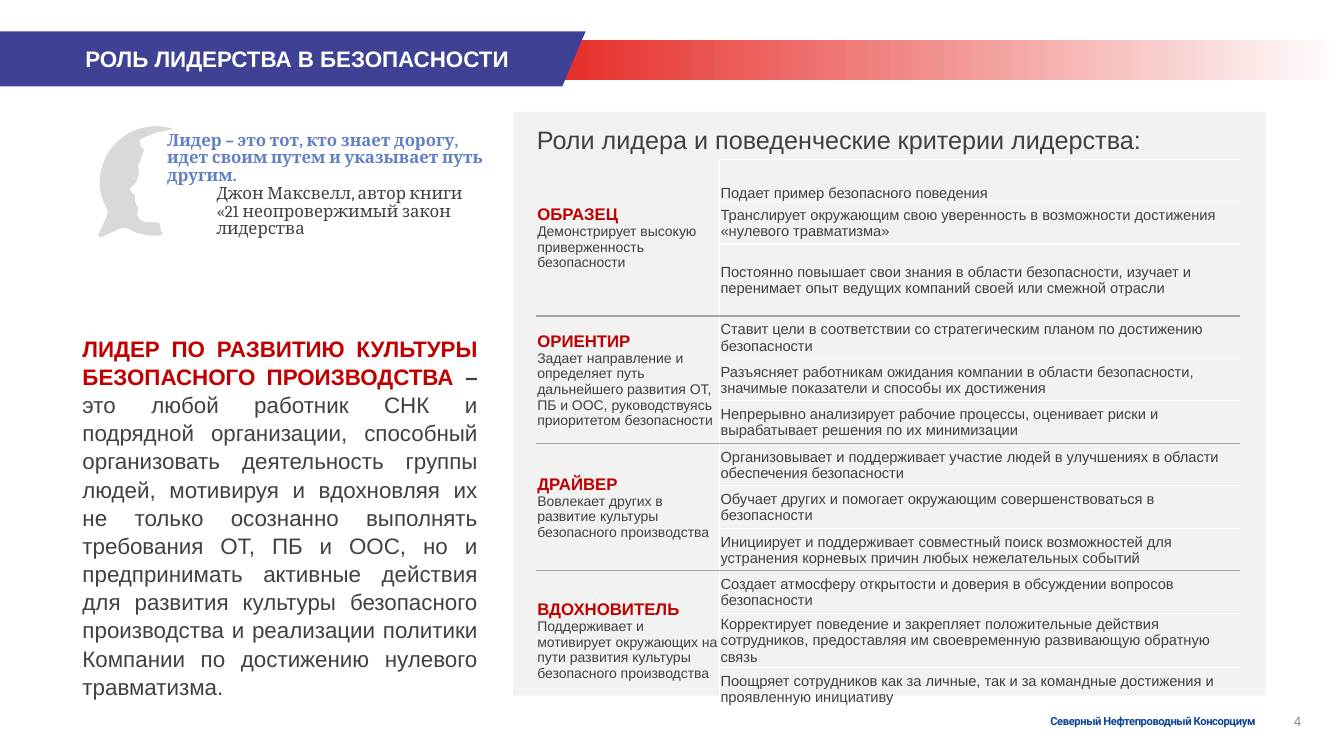
from dataclasses import dataclass

import pptx
import pptx.dml.color
import pptx.enum.shapes
import pptx.enum.text
import pptx.oxml
import pptx.oxml.ns
import pptx.util

Cm = pptx.util.Cm
Pt = pptx.util.Pt
ANCHOR = pptx.enum.text.MSO_ANCHOR
ALIGN = pptx.enum.text.PP_ALIGN
RECT = pptx.enum.shapes.MSO_SHAPE.RECTANGLE

COLORS = {
    "white": "FFFFFF", "red": "E62B27", "banner": "3F4195", "panel": "F2F2F2",
    "head": "D9D9D9", "text": "414042", "accent": "C00000", "quote": "627FC4",
    "number": "8D8B8F", "footer": "0B4395", "rule": "A6A6A6",
}
NO_STYLE = "{2D5ABB26-0587-4C30-8999-92F81FD0307C}"
ROLE_ROWS = 3
ROW_HEIGHT, TALL_ROW, TALL_ROW_HEIGHT = 1.07, 2, 1.81


@dataclass
class Style:
    size: float
    color: str = "text"
    bold: bool = False
    font: str = "Arial"


@dataclass
class Box:
    left: float
    top: float
    width: float
    height: float

    def emu(self) -> tuple:
        return Cm(self.left), Cm(self.top), Cm(self.width), Cm(self.height)


@dataclass
class Role:
    name: str
    summary: str
    criteria: tuple


ROLES = [
    Role("ОБРАЗЕЦ", "Демонстрирует высокую приверженность безопасности", (
        "Подает пример безопасного поведения",
        "Транслирует окружающим свою уверенность в возможности достижения «нулевого травматизма»",
        "Постоянно повышает свои знания в области безопасности, изучает и перенимает опыт ведущих компаний своей или смежной отрасли")),
    Role("ОРИЕНТИР", "Задает направление и определяет путь дальнейшего развития ОТ, ПБ и ООС, руководствуясь приоритетом безопасности", (
        "Ставит цели в соответствии со стратегическим планом по достижению безопасности",
        "Разъясняет работникам ожидания компании в области безопасности, значимые показатели и способы их достижения",
        "Непрерывно анализирует рабочие процессы, оценивает риски и вырабатывает решения по их минимизации")),
    Role("ДРАЙВЕР", "Вовлекает других в развитие культуры безопасного производства", (
        "Организовывает и поддерживает участие людей в улучшениях в области обеспечения безопасности",
        "Обучает других и помогает окружающим совершенствоваться в безопасности",
        "Инициирует и поддерживает совместный поиск возможностей для устранения корневых причин любых нежелательных событий")),
    Role("ВДОХНОВИТЕЛЬ", "Поддерживает и мотивирует окружающих на пути развития культуры безопасного производства", (
        "Создает атмосферу открытости и доверия в обсуждении вопросов безопасности",
        "Корректирует поведение и закрепляет положительные действия сотрудников, предоставляя им своевременную развивающую обратную связь",
        "Поощряет сотрудников как за личные, так и за командные достижения и проявленную инициативу")),
]

BANNER = [(0, 0.79), (14.76, 0.79), (14.17, 2.18), (0, 2.18)]
# Pairs are line ends; sixes are two control points and a curve end.
HEAD = [
    (3.89, 3.18), (3.12, 3.2, 2.51, 3.84, 2.51, 4.6), (2.51, 4.8, 2.57, 5.03, 2.67, 5.21),
    (2.72, 5.28, 2.72, 5.36, 2.69, 5.46), (2.49, 5.89), (2.46, 5.94, 2.51, 5.97, 2.57, 5.97),
    (3, 5.77), (3.07, 5.74, 3.15, 5.74, 3.25, 5.77), (3.43, 5.89, 3.66, 5.94, 3.91, 5.94),
    (4.11, 5.92), (4.06, 5.82), (4.04, 5.72), (4.01, 5.61), (3.76, 5.59), (3.63, 5.59),
    (3.53, 5.54), (3.45, 5.41), (3.48, 5.33), (3.48, 5.23), (3.43, 5.16), (3.4, 5.05),
    (3.4, 4.93), (3.28, 4.8), (3.3, 4.72), (3.43, 4.6), (3.51, 4.34), (3.48, 4.19),
    (3.56, 3.99), (3.63, 3.76), (3.56, 3.71), (3.53, 3.63), (3.53, 3.51), (3.71, 3.43),
    (3.91, 3.35), (4.14, 3.3), (4.37, 3.25), (4.22, 3.2, 4.06, 3.18, 3.89, 3.18),
]


def rgb(name: str):
    return pptx.dml.color.RGBColor.from_string(COLORS[name])


def style_run(r, style: Style) -> None:
    r.font.size, r.font.bold, r.font.name = Pt(style.size), style.bold, style.font
    r.font.color.rgb = rgb(style.color)


def fill_plain(s, color: str) -> None:
    s.shadow.inherit = False
    s.line.fill.background()
    s.fill.solid()
    s.fill.fore_color.rgb = rgb(color)


def flatten(outline: list, steps: int = 10) -> list:
    """Turn the curves of an outline into short straight pieces."""
    points = [outline[0]]
    for part in outline[1:]:
        if len(part) == 2:
            points.append(part)
            continue
        knots = [points[-1], part[:2], part[2:4], part[4:]]
        for i in range(1, steps + 1):
            t = i / steps
            weights = ((1 - t) ** 3, 3 * t * (1 - t) ** 2, 3 * t * t * (1 - t), t ** 3)
            points.append(tuple(sum(w * k[axis] for w, k in zip(weights, knots)) for axis in (0, 1)))
    return points


def add_outline(shapes, outline: list, color: str) -> None:
    points = [(Cm(x), Cm(y)) for x, y in flatten(outline)]
    builder = shapes.build_freeform(*points[0])
    builder.add_line_segments(points[1:], close=True)
    fill_plain(builder.convert_to_shape(), color)


def add_text(shapes, box: Box, text: str, styles: list, anchor=ANCHOR.TOP, wrap: bool = True):
    """Add a text box with one style for each paragraph."""
    tf = shapes.add_textbox(*box.emu()).text_frame
    tf.word_wrap, tf.vertical_anchor = wrap, anchor
    tf.text = text
    for p, style in zip(tf.paragraphs, styles):
        for r in p.runs:
            style_run(r, style)
    return tf


def fill_cell(cell, text: str, styles: list, borders: dict, anchor=ANCHOR.MIDDLE) -> None:
    cell.text = text
    cell.vertical_anchor = anchor
    cell.margin_left = cell.margin_right = cell.margin_top = Cm(0.03)
    cell.margin_bottom = 0
    for p, style in zip(cell.text_frame.paragraphs, styles):
        style_run(p.runs[0], style)
    set_borders(cell, borders)
    cell.fill.background()


def set_borders(cell, borders: dict) -> None:
    ns = pptx.oxml.ns.nsdecls("a")
    for side in "LRTB":
        if side in borders:
            cell._tc.get_or_add_tcPr().append(pptx.oxml.parse_xml(
                f'<a:ln{side} {ns} w="12700"><a:solidFill><a:srgbClr val="{COLORS[borders[side]]}"/>'
                f'</a:solidFill></a:ln{side}>'))


def add_roles(shapes) -> None:
    count = len(ROLES) * ROLE_ROWS
    frame = shapes.add_table(count, 2, *Box(13.51, 4.01, 17.75, count * ROW_HEIGHT).emu())
    table = frame.table
    table.first_row = table.horz_banding = False
    table._tbl.tblPr.find(pptx.oxml.ns.qn("a:tableStyleId")).text = NO_STYLE
    for column, width in zip(table.columns, (4.62, 13.13)):
        column.width = Cm(width)
    for i, row in enumerate(table.rows):
        row.height = Cm(TALL_ROW_HEIGHT if i == TALL_ROW else ROW_HEIGHT)

    for n, role in enumerate(ROLES):
        first = n * ROLE_ROWS
        last = first + ROLE_ROWS - 1
        rules = {"T": "rule"} if n else {}
        if n < len(ROLES) - 1:
            rules["B"] = "rule"
        title = table.cell(first, 0)
        title.merge(table.cell(last, 0))
        fill_cell(title, f"{role.name}\n{role.summary}",
                  [Style(12, "accent", True), Style(10)], {"R": "white", **rules})
        set_borders(table.cell(last, 0), {"B": rules["B"]} if "B" in rules else {})
        for i, text in enumerate(role.criteria, first):
            borders = {"L": "white", "T": "white", "B": "white"}
            if i == first and "T" in rules:
                borders["T"] = "rule"
            if i == last and "B" in rules:
                borders["B"] = "rule"
            fill_cell(table.cell(i, 1), text, [Style(10.5)], borders,
                      ANCHOR.MIDDLE if i else ANCHOR.BOTTOM)


def main() -> None:
    prs = pptx.Presentation()
    prs.slide_width, prs.slide_height = Cm(33.87), Cm(19.05)
    shapes = prs.slides.add_slide(prs.slide_layouts[6]).shapes

    bar = shapes.add_shape(RECT, *Box(13.94, 1.02, 19.93, 1).emu())
    fill_plain(bar, "red")
    bar.fill.gradient()
    bar.fill.gradient_angle = 0
    for stop, color, position in zip(bar.fill.gradient_stops, ("red", "white"), (0, 1)):
        stop.color.rgb, stop.position = rgb(color), position
    add_outline(shapes, BANNER, "banner")

    tf = add_text(shapes, Box(32.05, 17.96, 1.3, 0.41), "4", [Style(9.7, "number")], ANCHOR.MIDDLE)
    tf.margin_left = tf.margin_right = tf.margin_top = tf.margin_bottom = 0
    tf.paragraphs[0].alignment = ALIGN.CENTER
    tf = add_text(shapes, Box(24.49, 17.5, 9.37, 1.35), "Северный Нефтепроводный Консорциум",
                  [Style(8, "footer", True, "Roboto")], ANCHOR.MIDDLE)
    tf.margin_left = Cm(1.98)
    tf.paragraphs[0].runs[0].font._element.set("spc", "-30")

    fill_plain(shapes.add_shape(RECT, *Box(12.93, 2.82, 18.97, 14.71).emu()), "panel")
    add_text(shapes, Box(1.9, 0.76, 12.17, 1.42), "РОЛЬ ЛИДЕРСТВА В БЕЗОПАСНОСТИ",
             [Style(16, "white", True)], ANCHOR.MIDDLE)

    tf = add_text(shapes, Box(1.83, 8.28, 10.46, 9.14), "", [])
    p = tf.paragraphs[0]
    p.alignment, p.line_spacing = ALIGN.JUSTIFY, 1.05
    for text, style in (
        ("ЛИДЕР ПО РАЗВИТИЮ КУЛЬТУРЫ БЕЗОПАСНОГО ПРОИЗВОДСТВА ", Style(16, "accent", True)),
        ("– ", Style(16, bold=True)),
        ("это любой работник СНК и подрядной организации, способный организовать деятельность группы людей, мотивируя и вдохновляя их не только осознанно выполнять требования ОТ, ПБ и ООС, но и предпринимать активные действия для развития культуры безопасного производства и реализации политики Компании по достижению нулевого травматизма.", Style(16)),
    ):
        r = p.add_run()
        r.text = text
        style_run(r, style)

    add_outline(shapes, HEAD, "head")
    tf = add_text(shapes, Box(3.71, 3.2, 9.22, 2.82),
                  "Лидер – это тот, кто знает дорогу, идет своим путем и указывает путь другим.\n"
                  "Джон Максвелл, автор книги \v«21 неопровержимый закон лидерства",
                  [Style(12, "quote", True, "Cambria"), Style(12, font="Cambria")])
    for p, indent in zip(tf.paragraphs, (0.25, 1.5)):
        p.line_spacing = 0.88
        p._p.get_or_add_pPr().set("marL", str(Cm(indent)))

    add_text(shapes, Box(13.28, 3, 16, 1.02), "Роли лидера и поведенческие критерии лидерства:",
             [Style(18)], wrap=False)
    add_roles(shapes)
    prs.save("out.pptx")


if __name__ == "__main__":
    main()
